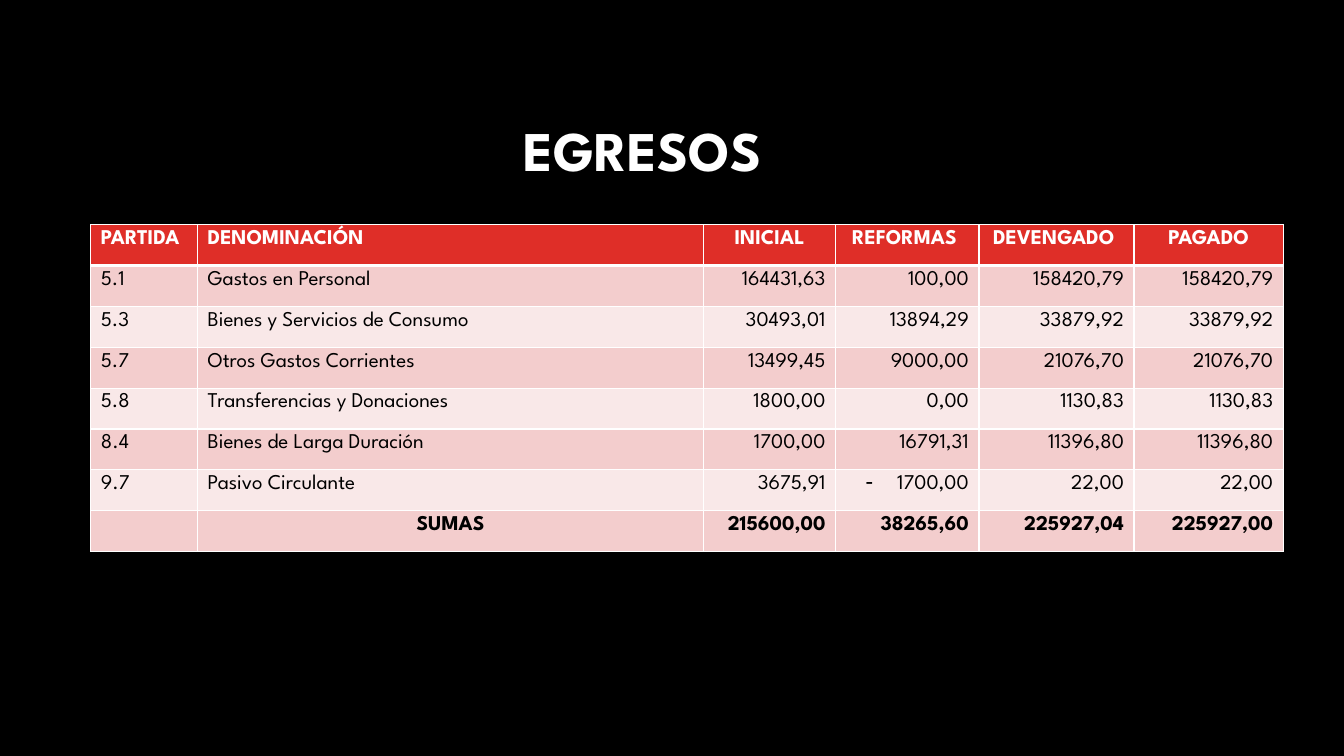
import pptx
import pptx.dml.color
import pptx.enum.text
import pptx.oxml
import pptx.oxml.ns
import pptx.util
from dataclasses import dataclass

Cm = pptx.util.Cm
Pt = pptx.util.Pt
Align = pptx.enum.text.PP_ALIGN


@dataclass
class Theme:
    font: str = "League Spartan"
    background: str = "000000"
    light: str = "FFFFFF"
    dark: str = "000000"
    header: str = "DF2E28"
    odd_row: str = "F3CDCD"
    even_row: str = "F9E8E8"
    title_size: int = 40
    table_size: int = 15


theme = Theme()


def set_font(paragraph, size, color, bold):
    font = paragraph.font
    font.name = theme.font
    font.size = Pt(size)
    font.bold = bold
    font.color.rgb = pptx.dml.color.RGBColor.from_string(color)


def add_border(cell, side, points):
    cell._tc.get_or_add_tcPr().append(pptx.oxml.parse_xml(
        f'<a:ln{side} {pptx.oxml.ns.nsdecls("a")} w="{Pt(points)}">'
        f'<a:solidFill><a:srgbClr val="{theme.light}"/></a:solidFill></a:ln{side}>'))


# Page
deck = pptx.Presentation()
deck.slide_width, deck.slide_height = Cm(33.87), Cm(19.05)
page = deck.slides.add_slide(deck.slide_layouts[6])
page.background.fill.solid()
page.background.fill.fore_color.rgb = pptx.dml.color.RGBColor.from_string(theme.background)

# Budget table
rows = [
    ["PARTIDA", "DENOMINACIÓN", "INICIAL", "REFORMAS ", "DEVENGADO ", "PAGADO"],
    ["5.1", "Gastos en Personal", "164431,63", "100,00", "158420,79", "158420,79"],
    ["5.3", "Bienes y Servicios de Consumo", "30493,01", "13894,29", "33879,92", "33879,92"],
    ["5.7", "Otros Gastos Corrientes", "13499,45", "9000,00", "21076,70", "21076,70"],
    ["5.8", "Transferencias y Donaciones", "1800,00", "0,00", "1130,83", "1130,83"],
    ["8.4", "Bienes de Larga Duración", "1700,00", "16791,31", "11396,80", "11396,80"],
    ["9.7", "Pasivo Circulante", "3675,91", "1700,00", "22,00", "22,00"],
    ["", "SUMAS", "215600,00", "38265,60", "225927,04", "225927,00"],
]
widths = [2.69, 12.75, 3.33, 3.61, 3.91, 3.76]
row_height = 1.03
last = len(rows) - 1
table = page.shapes.add_table(len(rows), len(widths), Cm(2.29), Cm(5.66),
                              Cm(sum(widths)), Cm(row_height * len(rows))).table
for column, width in zip(table.columns, widths):
    column.width = Cm(width)

for r, values in enumerate(rows):
    table.rows[r].height = Cm(row_height)
    row_fill = theme.header if r == 0 else theme.odd_row if r % 2 else theme.even_row
    for c, value in enumerate(values):
        cell = table.cell(r, c)
        for side in "LRTB":
            under_header = (r, side) in [(0, "B"), (1, "T")]
            add_border(cell, side, 3 if under_header else 1)
        cell.fill.solid()
        cell.fill.fore_color.rgb = pptx.dml.color.RGBColor.from_string(row_fill)

        cell.text = value
        para = cell.text_frame.paragraphs[0]
        if c > 1:
            para.alignment = Align.CENTER if r == 0 else Align.RIGHT
        elif value == "SUMAS":
            para.alignment = Align.CENTER
        # The negative reform carries its minus sign as a bullet
        if values[0] == "9.7" and c == 3:
            properties = para._p.get_or_add_pPr()
            properties.set("marL", str(Cm(0.79)))
            properties.set("indent", str(-Cm(0.79)))
            properties.append(pptx.oxml.parse_xml(
                f'<a:buChar {pptx.oxml.ns.nsdecls("a")} char="-"/>'))
        set_font(para, theme.table_size, theme.dark if r else theme.light, r in (0, last))

# Title
box = page.shapes.add_textbox(Cm(4.42), Cm(2.08), Cm(23.93), Cm(3.58))
frame = box.text_frame
frame.word_wrap = True
frame.vertical_anchor = pptx.enum.text.MSO_ANCHOR.MIDDLE
title = frame.paragraphs[0]
title.text = "EGRESOS "
title.alignment = Align.CENTER
title.line_spacing = 0.9
set_font(title, theme.title_size, theme.light, True)

deck.save("out.pptx")
